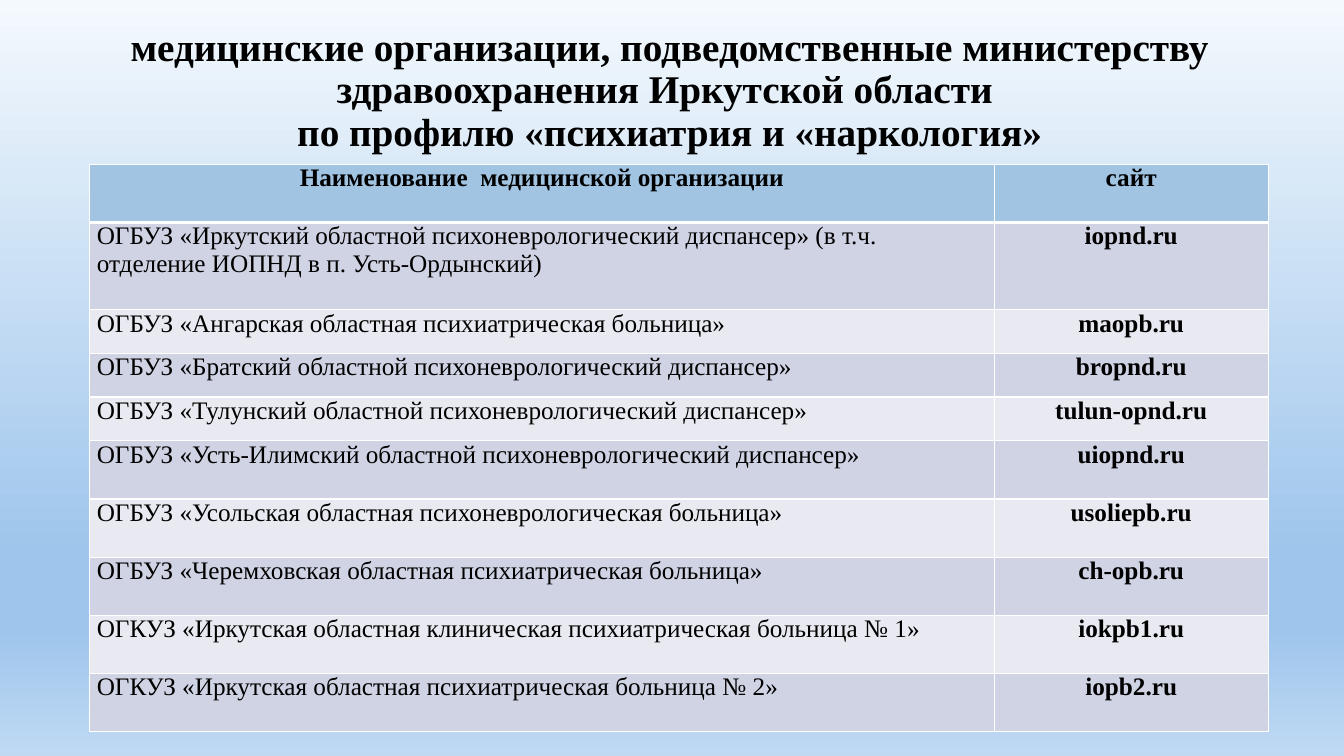
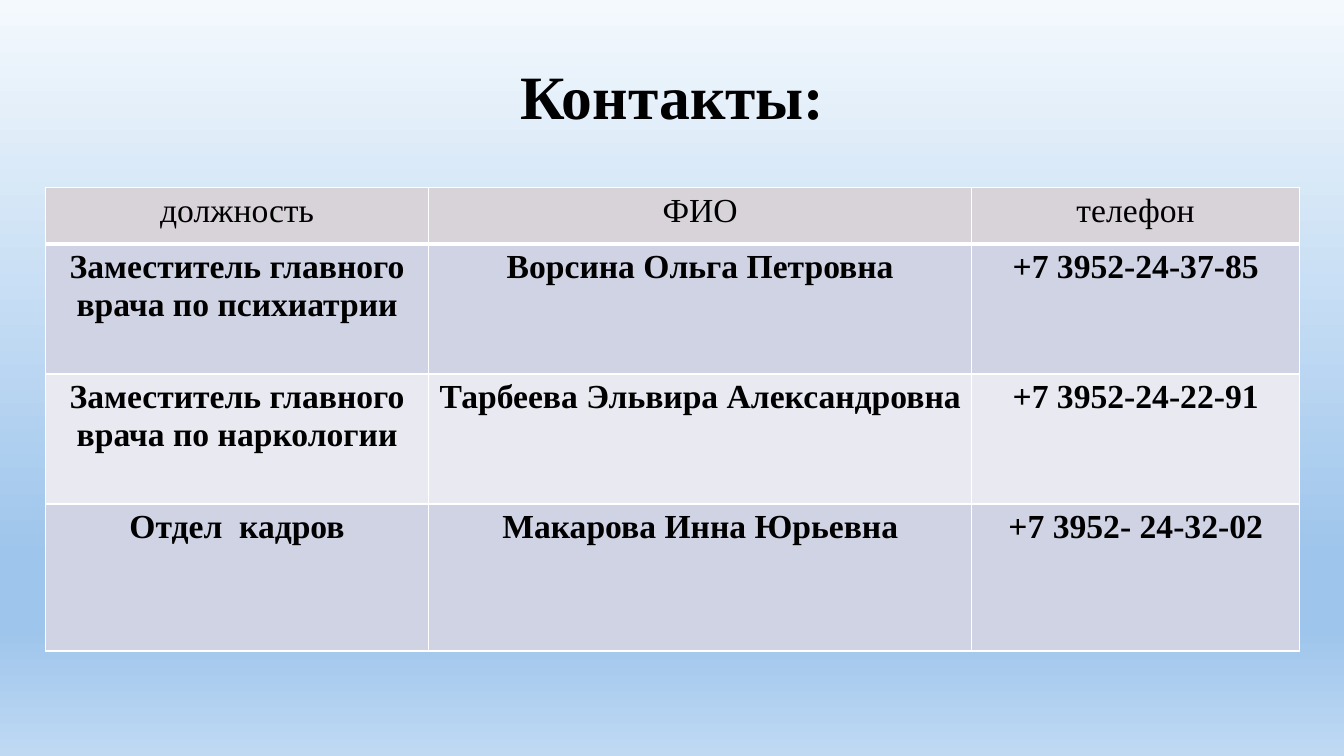
"""Build two slides listing psychiatric care organisations and their contacts."""
import copy

import lxml.etree
import pptx
import pptx.dml.color
import pptx.enum.text
import pptx.oxml.ns
import pptx.util

Inches, Pt = pptx.util.Inches, pptx.util.Pt
ALIGN = pptx.enum.text.PP_ALIGN
qn = pptx.oxml.ns.qn

FONT = "Times New Roman"
COLOURS = {
    "text": "000000",
    "border": "FFFFFF",
    "header_blue": "A1C4E3",
    "header_grey": "D8D3D9",
    "band_dark": "D0D3E3",
    "band_light": "E9EAF1",
}
BACKGROUND_STOPS = [(0, "F4F9FD"), (0.74, "9EC5EC"), (0.83, "9EC5EC"), (1, "BFD9F3")]

SLIDES = [
    {
        "title": [
            "медицинские организации, подведомственные министерству здравоохранения Иркутской области ",
            "по профилю «психиатрия и «наркология»",
        ],
        "title_box": (0.89, 0.18, 11.5, 1.45),
        "title_size": 28,
        "table_box": (0.89, 1.63, 11.69, 5.63),
        "column_shares": [8.97, 2.72],
        "row_shares": [4, 6, 3, 3, 3, 4, 4, 4, 4, 4],
        "text_size": 18,
        "margins": (0.07, 0),
        "header_fill": "header_blue",
        "header_bold": True,
        "column_styles": [(ALIGN.LEFT, False), (ALIGN.CENTER, True)],
        "rows": [
            ("Наименование  медицинской организации", "сайт"),
            ("ОГБУЗ «Иркутский областной психоневрологический диспансер» "
             "(в т.ч. отделение ИОПНД в п. Усть-Ордынский)", "iopnd.ru"),
            ("ОГБУЗ «Ангарская областная психиатрическая больница»", "maopb.ru"),
            ("ОГБУЗ «Братский областной психоневрологический диспансер»", "bropnd.ru"),
            ("ОГБУЗ «Тулунский областной психоневрологический диспансер»", "tulun-opnd.ru"),
            ("ОГБУЗ «Усть-Илимский областной психоневрологический диспансер»", "uiopnd.ru"),
            ("ОГБУЗ «Усольская областная психоневрологическая больница»", "usoliepb.ru"),
            ("ОГБУЗ «Черемховская областная психиатрическая больница»", "ch-opb.ru"),
            ("ОГКУЗ «Иркутская областная клиническая психиатрическая больница № 1»", "iokpb1.ru"),
            ("ОГКУЗ «Иркутская областная психиатрическая больница № 2»", "iopb2.ru"),
        ],
    },
    {
        "title": ["Контакты:"],
        "title_box": (0.92, 0.73, 11.5, 0.51),
        "title_size": 44,
        "table_box": (0.45, 1.86, 12.44, 4.6),
        "column_shares": [3.8, 5.38, 3.25],
        "row_shares": [0.56, 1.29, 1.29, 1.46],
        "text_size": 24,
        "margins": (0.1, 0.05),
        "header_fill": "header_grey",
        "header_bold": False,
        "column_styles": [(ALIGN.CENTER, True)] * 3,
        "rows": [
            ("должность", "ФИО", "телефон"),
            ("Заместитель главного врача по психиатрии", "Ворсина Ольга Петровна", "+7 3952-24-37-85"),
            ("Заместитель главного врача по наркологии", "Тарбеева Эльвира Александровна", "+7 3952-24-22-91"),
            ("Отдел  кадров", "Макарова Инна Юрьевна", "+7 3952- 24-32-02"),
        ],
    },
]


def rgb(hex_colour):
    return pptx.dml.color.RGBColor.from_string(hex_colour)


def format_paragraph(paragraph, size, bold, alignment):
    paragraph.alignment = alignment
    paragraph.font.name = FONT
    paragraph.font.size = Pt(size)
    paragraph.font.bold = bold
    paragraph.font.color.rgb = rgb(COLOURS["text"])


def set_background(master):
    fill = master.background.fill
    fill.gradient()
    fill.gradient_angle = 270
    stop_list = master.element.find(".//" + qn("p:bg")).find(".//" + qn("a:gsLst"))
    while len(stop_list) < len(BACKGROUND_STOPS):
        stop_list.append(copy.deepcopy(stop_list[0]))
    for stop, (position, colour) in zip(fill.gradient_stops, BACKGROUND_STOPS):
        stop.position = position
        stop.color.rgb = rgb(colour)


def set_borders(cell, top, bottom):
    properties = cell._tc.get_or_add_tcPr()
    for side, width in (("L", 1), ("R", 1), ("T", top), ("B", bottom)):
        line = lxml.etree.SubElement(properties, qn("a:ln" + side), w=str(Pt(width)))
        solid = lxml.etree.SubElement(line, qn("a:solidFill"))
        lxml.etree.SubElement(solid, qn("a:srgbClr"), val=COLOURS["border"])


def add_title(slide, content):
    title = slide.shapes.title
    title.left, title.top, title.width, title.height = map(Inches, content["title_box"])
    frame = title.text_frame
    frame.auto_size = pptx.enum.text.MSO_AUTO_SIZE.NONE
    frame.vertical_anchor = pptx.enum.text.MSO_ANCHOR.MIDDLE
    paragraph = frame.paragraphs[0]
    for index, line in enumerate(content["title"]):
        if index:
            paragraph.add_line_break()
        paragraph.add_run().text = line
    paragraph.line_spacing = 0.9
    format_paragraph(paragraph, content["title_size"], True, ALIGN.CENTER)


def share_out(items, attribute, length, shares):
    for item, share in zip(items, shares):
        setattr(item, attribute, Inches(length * share / sum(shares)))


def fill_cell(cell, text, row, column, content):
    is_header = row == 0
    alignment, bold = content["column_styles"][column]
    if is_header:
        alignment, bold = ALIGN.CENTER, content["header_bold"]
    band = "band_dark" if row % 2 else "band_light"
    side, vertical = map(Inches, content["margins"])
    cell.margin_left = cell.margin_right = side
    cell.margin_top = cell.margin_bottom = vertical
    set_borders(cell, 3 if row == 1 else 1, 3 if is_header else 1)
    cell.fill.solid()
    cell.fill.fore_color.rgb = rgb(COLOURS[content["header_fill"] if is_header else band])
    cell.text = text
    format_paragraph(cell.text_frame.paragraphs[0], content["text_size"], bold, alignment)


def add_table(slide, content):
    rows = content["rows"]
    box = content["table_box"]
    table = slide.shapes.add_table(len(rows), len(rows[0]), *map(Inches, box)).table
    share_out(table.columns, "width", box[2], content["column_shares"])
    share_out(table.rows, "height", box[3], content["row_shares"])
    for row, texts in enumerate(rows):
        for column, text in enumerate(texts):
            fill_cell(table.cell(row, column), text, row, column, content)


def main():
    presentation = pptx.Presentation()
    presentation.slide_width, presentation.slide_height = Inches(13.33), Inches(7.5)
    set_background(presentation.slide_master)
    title_only = presentation.slide_layouts.get_by_name("Title Only")
    for content in SLIDES:
        slide = presentation.slides.add_slide(title_only)
        add_title(slide, content)
        add_table(slide, content)
    presentation.save("out.pptx")


if __name__ == "__main__":
    main()
